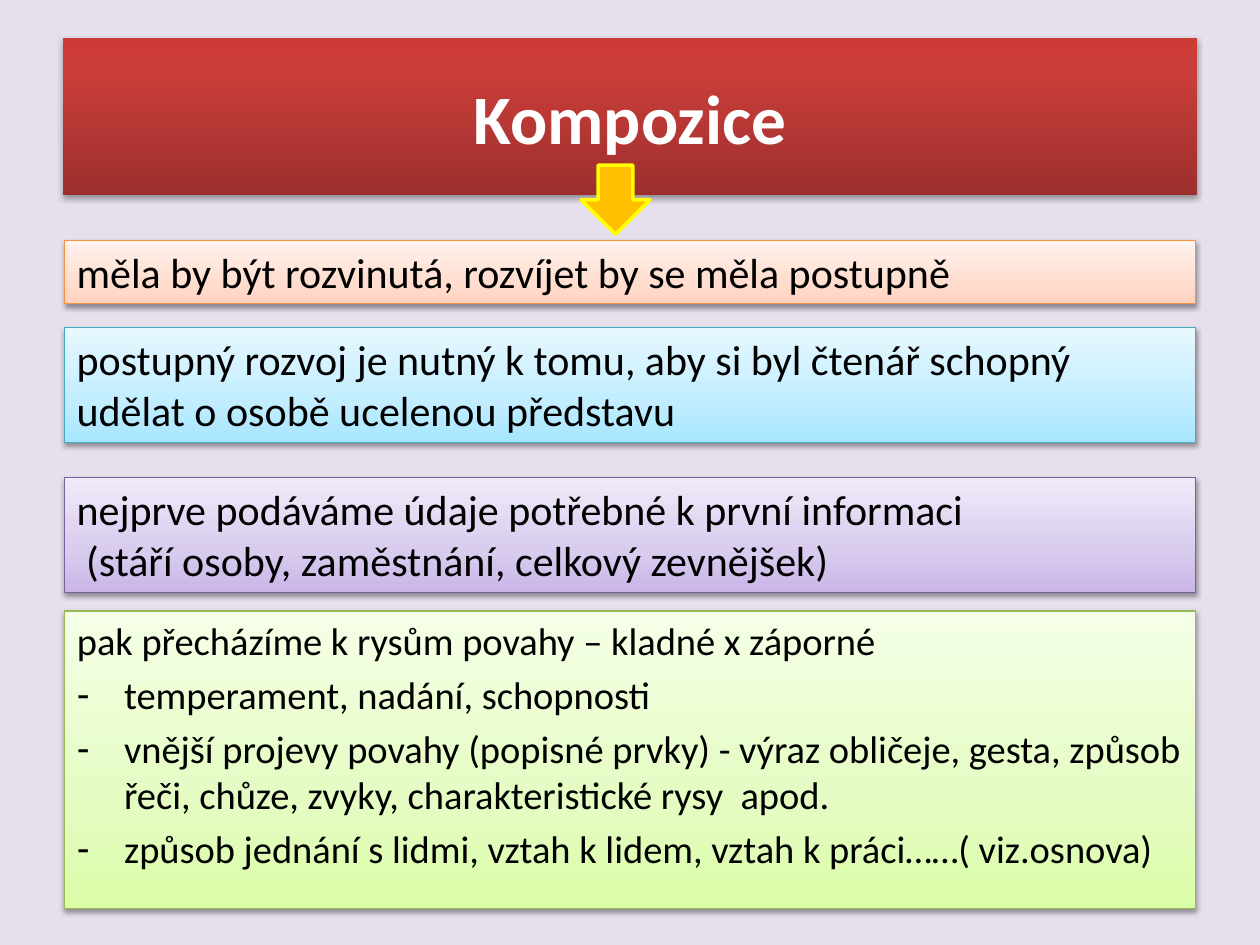
from copy import deepcopy
from dataclasses import dataclass

from lxml import etree
from pptx import Presentation
from pptx import util as u
from pptx.dml.color import RGBColor
from pptx.enum import shapes, text
from pptx.oxml import ns


@dataclass(frozen=True)
class Theme:
    font: str = "Calibri"
    title_size: float = 39.6
    box_size: float = 24
    list_size: float = 22
    background: str = "E6E0EC"
    ink: str = "000000"
    title_ink: str = "FFFFFF"
    arrow: str = "FFC000"
    arrow_line: str = "FFFF00"
    # Gradient colours run from the bottom edge to the top edge.
    red: tuple = ("9C2F2D", "CB3E3A", "CE3B37")
    orange: tuple = ("FFD2BD", "FFDED0", "FFF2ED")
    blue: tuple = ("A7E6FF", "C1EDFF", "E7F8FF")
    purple: tuple = ("C9B5E8", "D8CBEE", "F0EAF9")
    green: tuple = ("DAFDA7", "E4FCC2", "F5FFE7")
    orange_line: str = "F69240"
    blue_line: str = "46AAC5"
    purple_line: str = "7D60A0"
    green_line: str = "98B955"


def color(value):
    return RGBColor.from_string(value)


class SlideBuilder:
    def __init__(self, page, theme):
        self.page = page
        self.theme = theme
        page.background.fill.solid()
        page.background.fill.fore_color.rgb = color(theme.background)

    def place(self, shape, left, top, width, height):
        shape.left, shape.top = u.Inches(left), u.Inches(top)
        shape.width, shape.height = u.Inches(width), u.Inches(height)

    def gradient(self, shape, colors, middle):
        shape.fill.gradient()
        shape.fill.gradient_angle = 90
        stops = next(shape.element.iter(ns.qn("a:gsLst")))
        stops.insert(1, deepcopy(stops[0]))
        for stop, place, value in zip(shape.fill.gradient_stops, (0, middle, 1), colors):
            stop.position = place
            stop.color.rgb = color(value)

    def outline(self, shape, value, width=0.75):
        shape.line.color.rgb = color(value)
        shape.line.width = u.Pt(width)

    def shadow(self, shape, distance=1.6, opacity=38):
        shape.shadow.inherit = False
        effects = next(shape.element.iter(ns.qn("a:effectLst")))
        outer = etree.SubElement(
            effects, ns.qn("a:outerShdw"), blurRad=str(u.Pt(3.1)),
            dist=str(u.Pt(distance)), dir="5400000", rotWithShape="0")
        black = etree.SubElement(outer, ns.qn("a:srgbClr"), val="000000")
        etree.SubElement(black, ns.qn("a:alpha"), val=str(opacity * 1000))

    def style(self, para, size, ink, bold=False):
        para.font.name = self.theme.font
        para.font.size = u.Pt(size)
        para.font.bold = bold
        para.font.color.rgb = color(ink)

    def panel(self, shape, colors, line):
        self.gradient(shape, colors, 0.35)
        self.outline(shape, line)
        self.shadow(shape)

    def title(self, words, *place):
        shape = self.page.shapes.title
        self.place(shape, *place)
        self.gradient(shape, self.theme.red, 0.8)
        self.shadow(shape, 1.8, 35)
        frame = shape.text_frame
        frame.text = words
        frame.auto_size = text.MSO_AUTO_SIZE.NONE
        frame.vertical_anchor = text.MSO_ANCHOR.MIDDLE
        para = frame.paragraphs[0]
        para.alignment = text.PP_ALIGN.CENTER
        self.style(para, self.theme.title_size, self.theme.title_ink, True)

    def body(self, heading, items, *place):
        """Fill the body placeholder with a plain heading and dashed items."""
        shape = self.page.placeholders[1]
        self.place(shape, *place)
        self.panel(shape, self.theme.green, self.theme.green_line)
        frame = shape.text_frame
        frame.text = "\n".join([heading, *items])
        frame.auto_size = text.MSO_AUTO_SIZE.NONE
        for index, para in enumerate(frame.paragraphs):
            props = para._p.get_or_add_pPr()
            if index:
                etree.SubElement(props, ns.qn("a:buChar"), char="-")
            else:
                etree.SubElement(props, ns.qn("a:buNone"))
            self.style(para, self.theme.list_size, self.theme.ink)

    def box(self, words, colors, line, *place):
        box = self.page.shapes.add_textbox(*map(u.Inches, place))
        self.panel(box, colors, line)
        frame = box.text_frame
        frame.word_wrap = True
        frame.auto_size = text.MSO_AUTO_SIZE.SHAPE_TO_FIT_TEXT
        para = frame.paragraphs[0]
        para.text = words
        self.style(para, self.theme.box_size, self.theme.ink)

    def down_arrow(self, *place):
        arrow = self.page.shapes.add_shape(
            shapes.MSO_SHAPE.DOWN_ARROW, *map(u.Inches, place))
        arrow.fill.solid()
        arrow.fill.fore_color.rgb = color(self.theme.arrow)
        self.outline(arrow, self.theme.arrow_line, 2)
        arrow.shadow.inherit = False


def main():
    deck = Presentation()
    deck.slide_width, deck.slide_height = u.Inches(10), u.Inches(7.5)
    theme = Theme()
    slide = SlideBuilder(deck.slides.add_slide(deck.slide_layouts[1]), theme)
    left, width = 0.51, 8.98

    slide.title("Kompozice", 0.5, 0.3, 9, 1.25)
    slide.body(
        "pak přecházíme k rysům povahy – kladné x záporné",
        ["temperament, nadání, schopnosti",
         "vnější projevy povahy (popisné prvky) - výraz obličeje, gesta, "
         "způsob řeči, chůze, zvyky, charakteristické rysy  apod.",
         "způsob jednání s lidmi, vztah k lidem, vztah k práci……( viz.osnova)"],
        left, 4.85, width, 2.36)

    boxes = [
        ("měla by být rozvinutá, rozvíjet by se měla postupně",
         theme.orange, theme.orange_line, 1.91, 0.5),
        ("postupný rozvoj je nutný k tomu, aby si byl čtenář schopný "
         "udělat o osobě ucelenou představu",
         theme.blue, theme.blue_line, 2.6, 0.91),
        ("nejprve podáváme údaje potřebné k první informaci\v"
         " (stáří osoby, zaměstnání, celkový zevnějšek)",
         theme.purple, theme.purple_line, 3.79, 0.91),
    ]
    for words, colors, line, top, height in boxes:
        slide.box(words, colors, line, left, top, width, height)

    slide.down_arrow(4.61, 1.31, 0.55, 0.55)
    deck.save("out.pptx")


if __name__ == "__main__":
    main()
